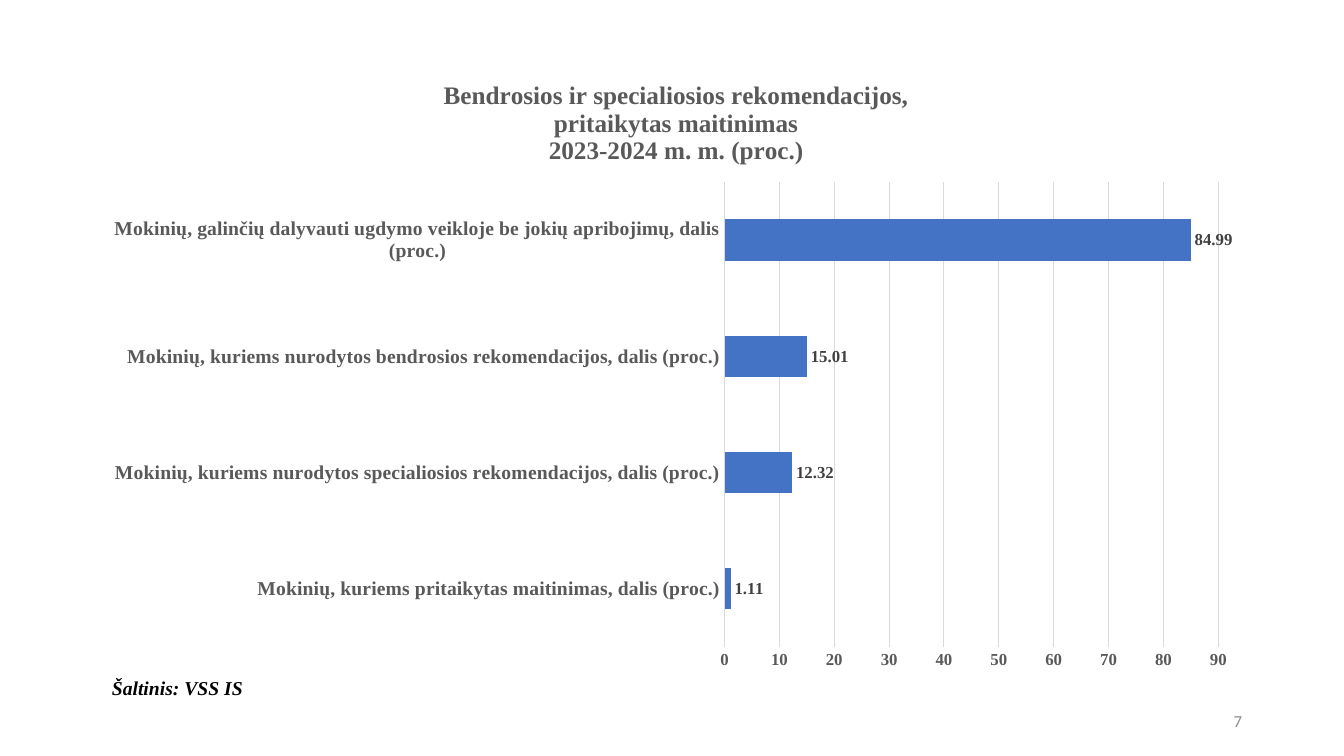
from lxml import etree
from pptx import Presentation
from pptx.chart.data import CategoryChartData
from pptx.dml.color import RGBColor
from pptx.enum.chart import XL_CHART_TYPE as ChartType
from pptx.enum.chart import XL_LABEL_POSITION as LabelPosition
from pptx.enum.chart import XL_TICK_MARK as TickMark
from pptx.enum.text import MSO_ANCHOR as Anchor
from pptx.enum.text import PP_ALIGN as Align
from pptx.oxml.ns import qn
from pptx.util import Pt

EMU_PER_PX = 914400 / 100.8
SERIF = "Times New Roman"
COLORS = {
    "bar": "4472C4",
    "axis": "595959",
    "grid": "D9D9D9",
    "label": "404040",
    "source": "000000",
    "number": "8C8C8C",
}
TITLE = [
    "Bendrosios ir specialiosios rekomendacijos,",
    "pritaikytas maitinimas",
    "2023-2024 m. m. (proc.)",
]
SHARES = {
    "Mokinių, kuriems pritaikytas maitinimas, dalis (proc.)": 1.11,
    "Mokinių, kuriems nurodytos specialiosios rekomendacijos, dalis (proc.)": 12.32,
    "Mokinių, kuriems nurodytos bendrosios rekomendacijos, dalis (proc.)": 15.01,
    "Mokinių, galinčių dalyvauti ugdymo veikloje be jokių apribojimų, dalis (proc.)": 84.99,
}


def px(length):
    """Turn pixels into EMU."""
    return round(length * EMU_PER_PX)


def color(name):
    """Return a named colour."""
    return RGBColor.from_string(COLORS[name])


def set_font(font, size, name, face=SERIF, bold=True, italic=False):
    """Set the look of a font."""
    font.size, font.name, font.bold, font.italic = Pt(size), face, bold, italic
    font.color.rgb = color(name)


def set_line(line, name):
    """Give a line a colour and the thin chart width."""
    line.color.rgb = color(name)
    line.width = Pt(0.75)


def set_layout(element, **values):
    """Place a chart part by fractions of the chart area."""
    layout = element.find(qn("c:layout"))
    if layout is None:
        layout = etree.Element(qn("c:layout"))
        element.insert(0, layout)
    manual = etree.SubElement(layout, qn("c:manualLayout"))
    for tag, value in values.items():
        etree.SubElement(manual, qn(f"c:{tag}")).set("val", str(value))


def add_title(chart):
    """Write the chart title, one paragraph a line."""
    chart.has_title = True
    frame = chart.chart_title.text_frame
    for index, text in enumerate(TITLE):
        para = frame.add_paragraph() if index else frame.paragraphs[0]
        para.text = text
        set_font(para.font, 18, "axis")
    set_layout(chart.chart_title._element, xMode="edge", yMode="edge", x=0.3, y=0.03)


def style_axes(chart):
    """Style both axes and the gridlines."""
    for axis, size in ((chart.category_axis, 14), (chart.value_axis, 12)):
        axis.major_tick_mark = axis.minor_tick_mark = TickMark.NONE
        set_font(axis.tick_labels.font, size, "axis")
    set_line(chart.category_axis.format.line, "grid")
    values = chart.value_axis
    values.minimum_scale, values.maximum_scale, values.major_unit = 0, 90, 10
    values.format.line.fill.background()
    set_line(values.major_gridlines.format.line, "grid")


def style_bars(plot):
    """Style the bars and their value labels."""
    plot.gap_width = 182
    plot.vary_by_categories = False
    fill = plot.series[0].format.fill
    fill.solid()
    fill.fore_color.rgb = color("bar")
    plot.has_data_labels = True
    labels = plot.data_labels
    labels.show_value = True
    labels.position = LabelPosition.OUTSIDE_END
    set_font(labels.font, 12, "label")


def add_share_chart(page, left, top, width, height):
    """Add the bar chart of pupil shares."""
    data = CategoryChartData()
    data.categories = list(SHARES)
    data.add_series("Series 1", list(SHARES.values()))
    chart = page.shapes.add_chart(
        ChartType.BAR_CLUSTERED, px(left), px(top), px(width), px(height), data
    ).chart
    chart.has_legend = False
    add_title(chart)
    style_axes(chart)
    style_bars(chart.plots[0])
    plot_area = chart._chartSpace.chart.plotArea
    set_layout(plot_area, layoutTarget="inner", xMode="edge", yMode="edge",
               x=0.545, y=0.198, w=0.426, h=0.749)


def add_text(page, text, left, top, width, height, wrap=True):
    """Add a one-line text box and return its paragraph."""
    box = page.shapes.add_textbox(px(left), px(top), px(width), px(height))
    box.text_frame.word_wrap = wrap
    box.text_frame.vertical_anchor = Anchor.MIDDLE
    para = box.text_frame.paragraphs[0]
    para.text = text
    return para


def main():
    """Build and save the slide."""
    deck = Presentation()
    deck.slide_width, deck.slide_height = px(1344), px(756)
    page = deck.slides.add_slide(deck.slide_layouts[6])
    add_share_chart(page, 93, 59, 1159, 621)
    source = add_text(page, "Šaltinis: VSS IS", 102, 671, 152, 34, wrap=False)
    set_font(source.font, 14, "source", italic=True)
    number = add_text(page, "7", 950, 701, 302, 40)
    number.alignment = Align.RIGHT
    set_font(number.font, 12, "number", face="Calibri", bold=False)
    deck.save("out.pptx")


if __name__ == "__main__":
    main()
